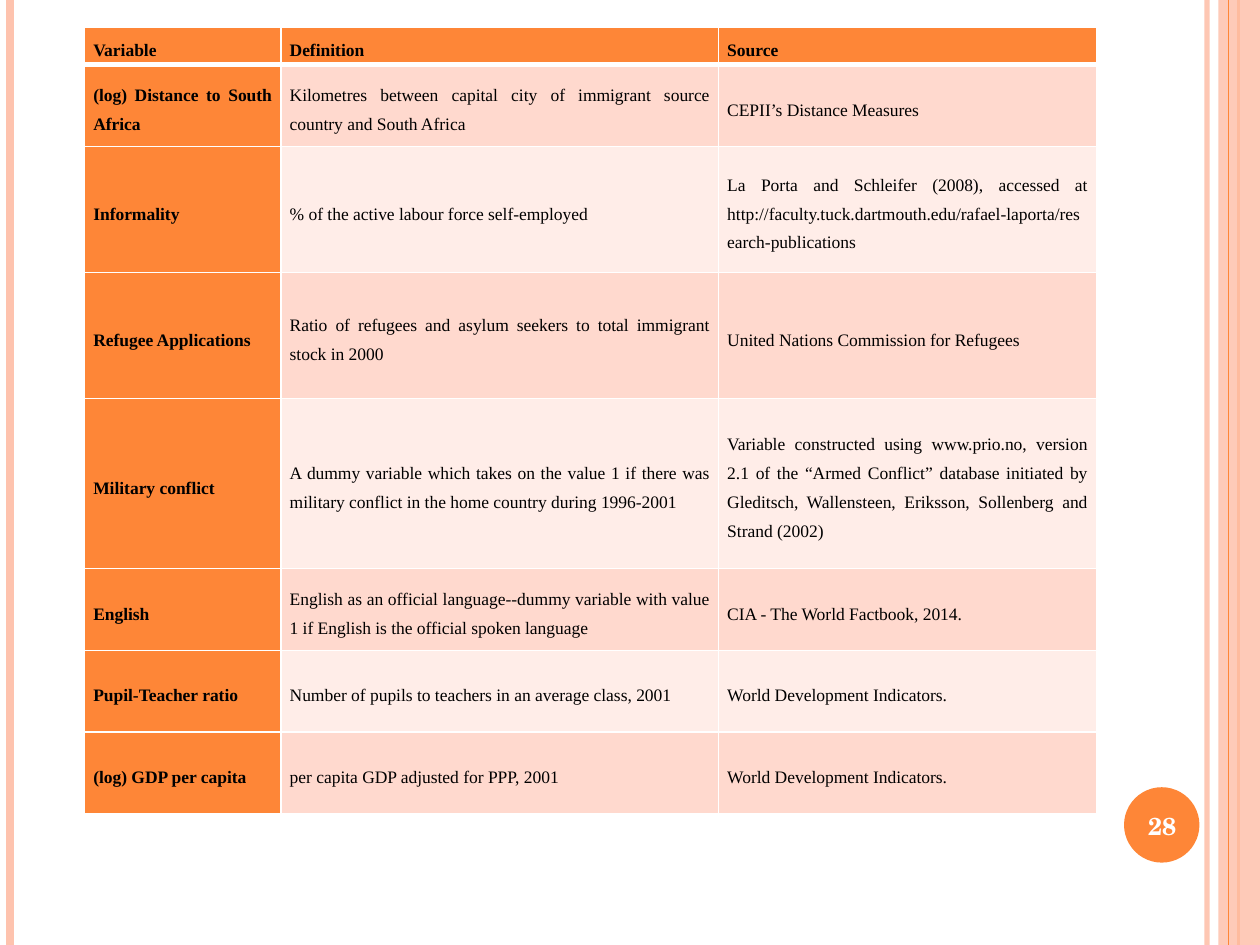
from lxml.etree import SubElement
from pptx import Presentation
from pptx.dml.color import RGBColor
from pptx.enum.shapes import MSO_CONNECTOR, MSO_SHAPE
from pptx.enum.text import MSO_ANCHOR, PP_ALIGN
from pptx.oxml.ns import qn
from pptx.util import Cm, Pt

ORANGE = RGBColor(0xFE, 0x86, 0x37)
PEACH = RGBColor(0xFE, 0xC3, 0xAE)
ROW_DARK = RGBColor(0xFF, 0xD9, 0xCE)
ROW_LIGHT = RGBColor(0xFF, 0xED, 0xE8)
BLACK = RGBColor(0, 0, 0)
WHITE = RGBColor(0xFF, 0xFF, 0xFF)

SLIDE_HEIGHT = Cm(19.05)
COLUMN_WIDTHS = (3.96, 8.82, 7.62)
ROW_HEIGHTS = (0.76, 1.65, 2.54, 2.54, 3.43, 1.65, 1.65, 1.65)
ROWS = (
    ("Variable", "Definition", "Source"),
    ("(log) Distance to South Africa",
     "Kilometres between capital city of immigrant source country and South Africa",
     "CEPII’s Distance Measures"),
    ("Informality",
     "% of the active labour force self-employed",
     "La Porta and Schleifer (2008), accessed at "
     "http://faculty.tuck.dartmouth.edu/rafael-laporta/research-publications"),
    ("Refugee Applications",
     "Ratio of refugees and asylum seekers to total immigrant stock in 2000",
     "United Nations Commission for Refugees"),
    ("Military conflict",
     "A dummy variable which takes on the value 1 if there was military conflict "
     "in the home country during 1996-2001",
     "Variable constructed using www.prio.no, version 2.1 of the “Armed Conflict” "
     "database initiated by Gleditsch, Wallensteen, Eriksson, Sollenberg and Strand (2002)"),
    ("English",
     "English as an official language--dummy variable with value 1 if English is "
     "the official spoken language",
     "CIA - The World Factbook, 2014."),
    ("Pupil-Teacher ratio",
     "Number of pupils to teachers in an average class, 2001",
     "World Development Indicators."),
    ("(log) GDP per capita",
     "per capita GDP adjusted for PPP, 2001",
     "World Development Indicators."),
)


def add_vertical_line(left, width, color):
    line = slide.shapes.add_connector(
        MSO_CONNECTOR.STRAIGHT, Cm(left), 0, Cm(left), SLIDE_HEIGHT)
    line.line.width = Pt(width)
    line.line.color.rgb = color
    SubElement(line._element.spPr, qn("a:effectLst"))
    return line


presentation = Presentation()
presentation.slide_width = Cm(25.4)
presentation.slide_height = SLIDE_HEIGHT
slide = presentation.slides.add_slide(presentation.slide_layouts[6])

# Side stripes and number badge
inner_line = add_vertical_line(24.33, 3, PEACH)
add_vertical_line(0.2, 4.5, PEACH)
add_vertical_line(24.97, 1.5, ORANGE)
band = slide.shapes.add_shape(
    MSO_SHAPE.RECTANGLE, Cm(24.56), 0, Cm(0.84), SLIDE_HEIGHT)
add_vertical_line(24.77, 0.75, ORANGE)
badge = slide.shapes.add_shape(
    MSO_SHAPE.OVAL, Cm(22.66), Cm(15.87), Cm(1.52), Cm(1.52))

for shape, color in ((band, PEACH), (badge, ORANGE)):
    shape.shadow.inherit = False
    shape.fill.solid()
    shape.fill.fore_color.rgb = color
    shape.line.fill.background()

for shape, opacity in ((inner_line, 93), (band, 87)):
    color_element = shape._element.spPr.find(".//" + qn("a:srgbClr"))
    SubElement(color_element, qn("a:alpha"), val=str(opacity * 1000))

# Table of variables
table = slide.shapes.add_table(
    len(ROWS), len(COLUMN_WIDTHS), Cm(1.7), Cm(0.54),
    Cm(sum(COLUMN_WIDTHS)), Cm(sum(ROW_HEIGHTS))).table
table.first_row = False
table.horz_banding = False
for column, width in zip(table.columns, COLUMN_WIDTHS):
    column.width = Cm(width)

for row_index, (row, height, texts) in enumerate(zip(table.rows, ROW_HEIGHTS, ROWS)):
    row.height = Cm(height)
    for column_index, (cell, text) in enumerate(zip(row.cells, texts)):
        is_heading = row_index == 0 or column_index == 0
        cell.margin_left = cell.margin_right = Cm(0.18)
        cell.margin_top = cell.margin_bottom = 0
        cell.vertical_anchor = MSO_ANCHOR.MIDDLE

        cell_properties = cell._tc.get_or_add_tcPr()
        for side in "LRTB":
            under_header = (row_index, side) in ((0, "B"), (1, "T"))
            border = SubElement(cell_properties, qn(f"a:ln{side}"),
                                w=str(Pt(3 if under_header else 1)))
            border_fill = SubElement(border, qn("a:solidFill"))
            SubElement(border_fill, qn("a:srgbClr"), val=str(WHITE))

        cell.fill.solid()
        if is_heading:
            cell.fill.fore_color.rgb = ORANGE
        else:
            cell.fill.fore_color.rgb = ROW_DARK if row_index % 2 else ROW_LIGHT

        cell.text = text
        paragraph = cell.text_frame.paragraphs[0]
        paragraph.alignment = PP_ALIGN.JUSTIFY
        paragraph.line_spacing = 1.5
        paragraph.space_after = Pt(10)
        paragraph.font.name = "Times New Roman"
        paragraph.font.size = Pt(10)
        paragraph.font.bold = is_heading
        paragraph.font.color.rgb = BLACK

# Slide number
number_box = slide.shapes.add_textbox(Cm(22.58), Cm(15.93), Cm(1.7), Cm(1.45))
number_box.text_frame.word_wrap = True
number_box.text_frame.vertical_anchor = MSO_ANCHOR.MIDDLE
paragraph = number_box.text_frame.paragraphs[0]
paragraph.text = "28"
paragraph.alignment = PP_ALIGN.CENTER
paragraph.font.name = "TeX Gyre Schola"
paragraph.font.size = Pt(14)
paragraph.font.bold = True
paragraph.font.color.rgb = WHITE

presentation.save("out.pptx")
